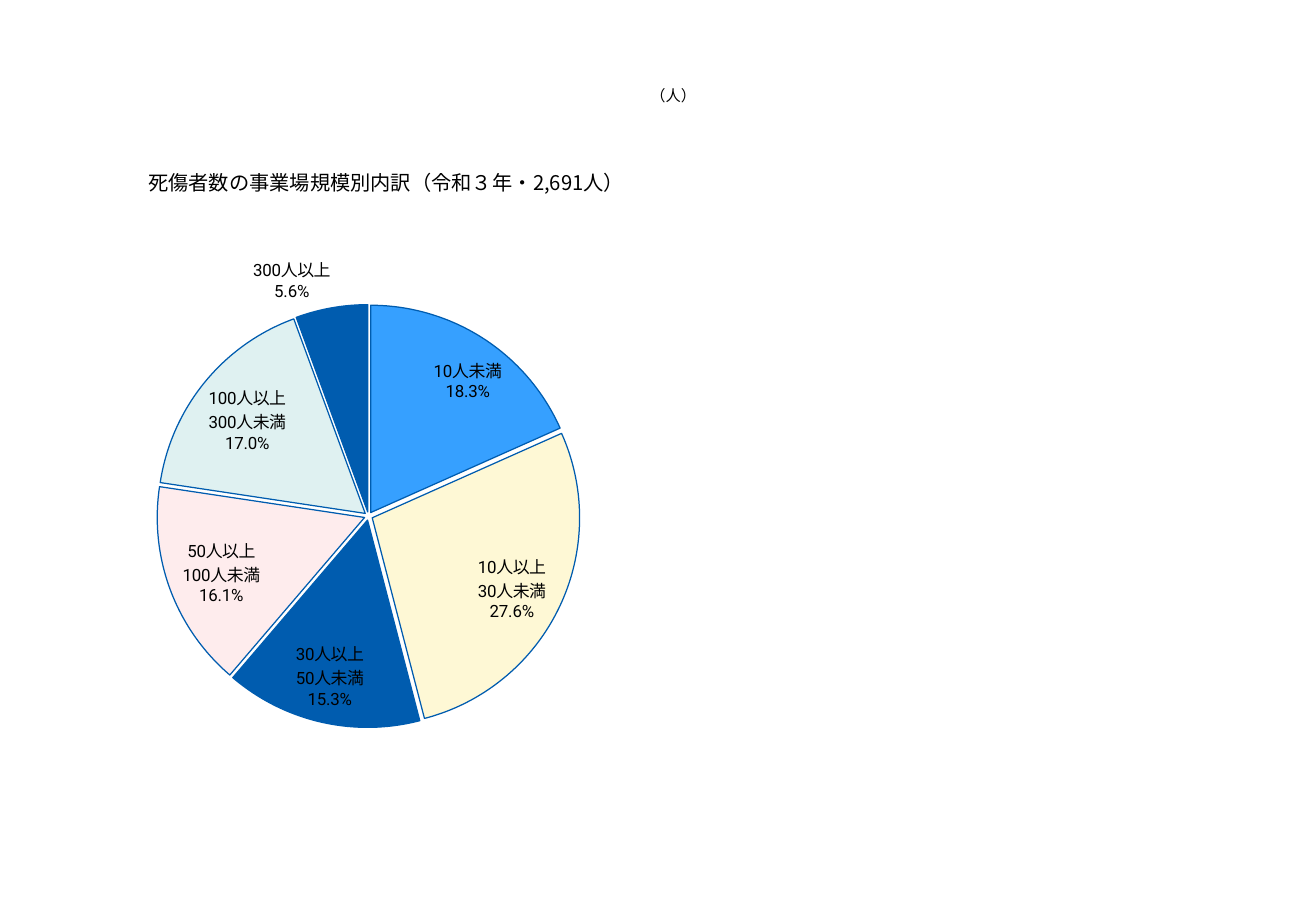
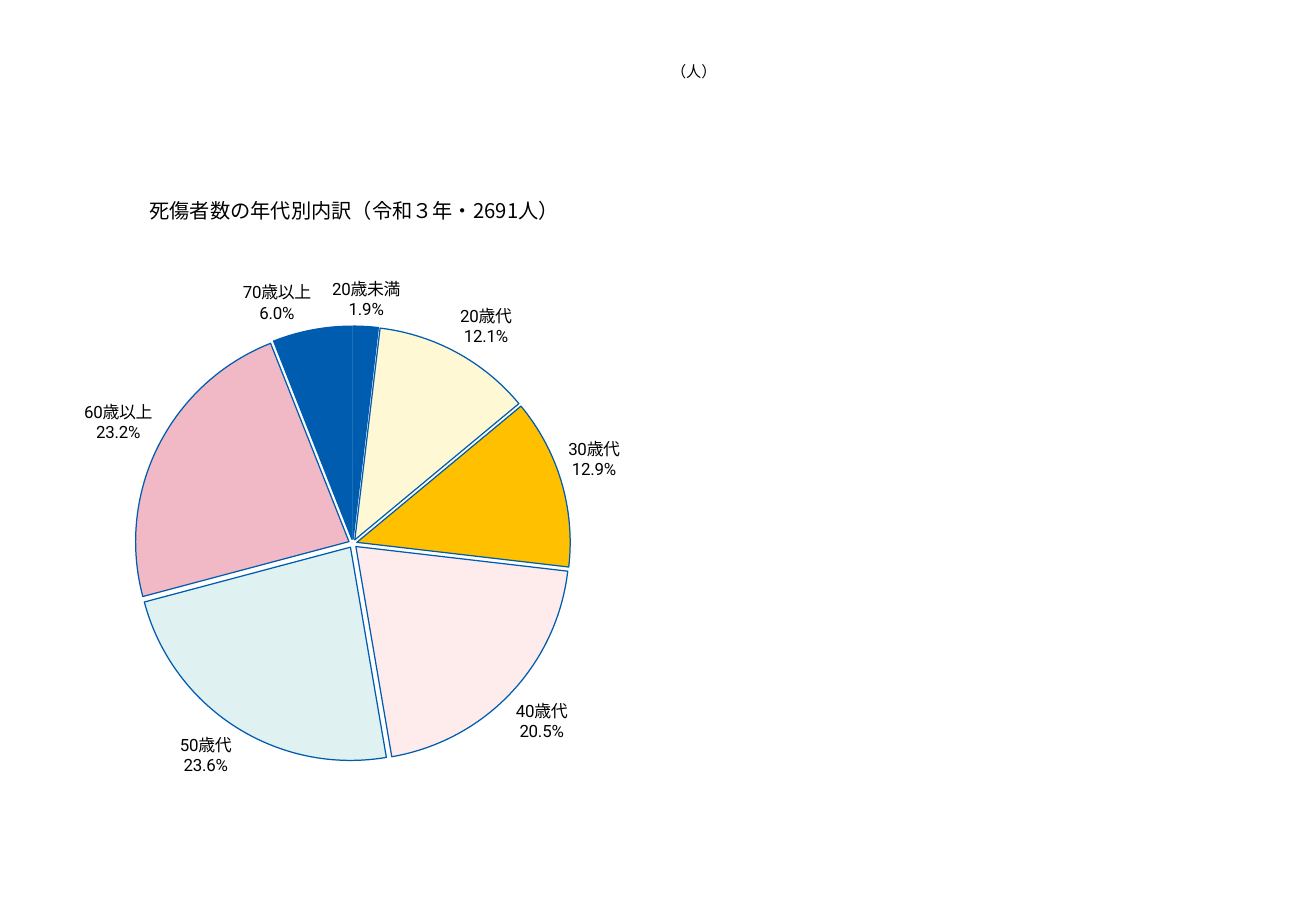
from dataclasses import dataclass

from lxml import etree
from pptx import Presentation
from pptx import util as u
from pptx.chart import data as chart_data
from pptx.dml import color
from pptx.enum import chart as charts, text
from pptx.oxml import ns


@dataclass(frozen=True)
class Theme:
    ink: str = "000000"
    blue: str = "005CAF"
    sky: str = "36A0FF"
    cream: str = "FEF8D5"
    amber: str = "FFC000"
    blush: str = "FEECED"
    mint: str = "DFF1F1"
    pink: str = "F1B8C5"
    latin: str = "Roboto"
    asian: str = "Noto Sans CJK JP"
    title_size: float = 12
    label_size: float = 10
    unit_size: float = 9
    outline: float = 0.75
    explosion: int = 2


THEME = Theme()
POSITION = charts.XL_LABEL_POSITION

# Boxes are left, top, width, height in cm; layouts are fractions of the chart
PAGES = [
    dict(
        title="死傷者数の事業場規模別内訳（令和３年・2,691人）",
        title_at=(0.205, 0.028),
        box=(0.2, 2.97, 13.77, 13.34),
        plot=(0.138, 0.255, 0.814, 0.663),
        unit_box=(13.34, 1.47, 1.47, 1.07),
        position=POSITION.BEST_FIT,
        slices=[
            ("10人未満", 18.3, THEME.sky),
            ("10人以上\n30人未満", 27.6, THEME.cream),
            ("30人以上\n50人未満", 15.3, THEME.blue),
            ("50人以上\n100人未満", 16.1, THEME.blush),
            ("100人以上\n300人未満", 17.0, THEME.mint),
            ("300人以上", 5.6, THEME.blue),
        ],
    ),
    dict(
        title="死傷者数の年代別内訳（令和３年・2691人）",
        title_at=(0.167, 0.042),
        box=(0.84, 3.38, 13.23, 13.13),
        plot=(0.088, 0.262, 0.812, 0.693),
        unit_box=(13.77, 0.96, 1.47, 1.07),
        position=POSITION.OUTSIDE_END,
        slices=[
            ("20歳未満", 1.9, THEME.blue),
            ("20歳代", 12.1, THEME.cream),
            ("30歳代", 12.9, THEME.amber),
            ("40歳代", 20.5, THEME.blush),
            ("50歳代", 23.6, THEME.mint),
            ("60歳以上", 23.2, THEME.pink),
            ("70歳以上", 6.0, THEME.blue),
        ],
    ),
]


def apply(target, values):
    for name, value in values.items():
        setattr(target, name, value)


def rgb(value):
    return color.RGBColor.from_string(value)


def style_font(font, size, latin=THEME.latin):
    apply(font, dict(size=u.Pt(size), name=latin, bold=False))
    font.color.rgb = rgb(THEME.ink)
    etree.SubElement(font._rPr, ns.qn("a:ea"), typeface=THEME.asian)


def chart_element(name, value):
    element = etree.Element(ns.qn(name))
    element.set("val", str(value))
    return element


def place_manually(parent, index, fractions, inner=False):
    """Give a chart title or plot area a fixed position."""
    for old in parent.findall(ns.qn("c:layout")):
        parent.remove(old)
    layout = etree.Element(ns.qn("c:layout"))
    manual = etree.SubElement(layout, ns.qn("c:manualLayout"))
    if inner:
        manual.append(chart_element("c:layoutTarget", "inner"))
    for name in ("c:xMode", "c:yMode"):
        manual.append(chart_element(name, "edge"))
    for name, value in zip(("c:x", "c:y", "c:w", "c:h"), fractions):
        manual.append(chart_element(name, value))
    parent.insert(index, layout)


def add_title(chart, wording, position):
    frame = chart.chart_title.text_frame
    span = frame.paragraphs[0].add_run()
    span.text = wording
    style_font(span.font, THEME.title_size, THEME.asian)
    place_manually(chart.chart_title._element, 1, position)


def paint_slices(series, colours):
    series.format.line.color.rgb = rgb(THEME.blue)
    series._element.find(ns.qn("c:spPr")).addnext(
        chart_element("c:explosion", THEME.explosion))
    for index, colour in enumerate(colours):
        look = series.points[index].format
        look.fill.solid()
        look.fill.fore_color.rgb = rgb(colour)
        look.line.color.rgb = rgb(THEME.blue)
        look.line.width = u.Pt(THEME.outline)


def add_labels(series, position):
    labels = series.data_labels
    apply(labels, dict(
        show_category_name=True, show_percentage=True, show_value=False,
        show_legend_key=False, show_series_name=False, position=position,
        number_format="0.0%", number_format_is_linked=False))
    style_font(labels.font, THEME.label_size)
    separator = etree.Element(ns.qn("c:separator"))
    separator.text = "\n"
    labels._element.find(ns.qn("c:showBubbleSize")).addnext(separator)


def add_pie(page, box, title, title_at, plot_at, position, slices):
    names, values, colours = zip(*slices)
    source = chart_data.CategoryChartData()
    source.categories = names
    source.add_series("Series 1", values)
    chart = page.shapes.add_chart(
        charts.XL_CHART_TYPE.PIE, *map(u.Cm, box), source).chart
    chart.has_legend = False
    style_font(chart.font, THEME.label_size)
    add_title(chart, title, title_at)
    plot = chart.plots[0]
    plot.vary_by_categories = True
    series = plot.series[0]
    paint_slices(series, colours)
    add_labels(series, position)
    plot_area = chart._chartSpace.find(".//" + ns.qn("c:plotArea"))
    place_manually(plot_area, 0, plot_at, inner=True)


def add_unit(page, box):
    frame = page.shapes.add_textbox(*map(u.Cm, box)).text_frame
    apply(frame, dict(
        word_wrap=True, vertical_anchor=text.MSO_ANCHOR.MIDDLE,
        margin_left=0, margin_right=0, margin_top=0, margin_bottom=0))
    para = frame.paragraphs[0]
    para.alignment = text.PP_ALIGN.CENTER
    span = para.add_run()
    span.text = "（人）"
    style_font(span.font, THEME.unit_size)


def add_breakdown_page(deck, content):
    page = deck.slides.add_slide(deck.slide_layouts[6])
    # Pie with title and labels
    add_pie(page, content["box"], content["title"], content["title_at"],
            content["plot"], content["position"], content["slices"])
    # Unit note
    add_unit(page, content["unit_box"])


def main():
    deck = Presentation()
    apply(deck, dict(slide_width=u.Cm(27.51), slide_height=u.Cm(19.05)))
    for content in PAGES:
        add_breakdown_page(deck, content)
    deck.save("out.pptx")


if __name__ == "__main__":
    main()
